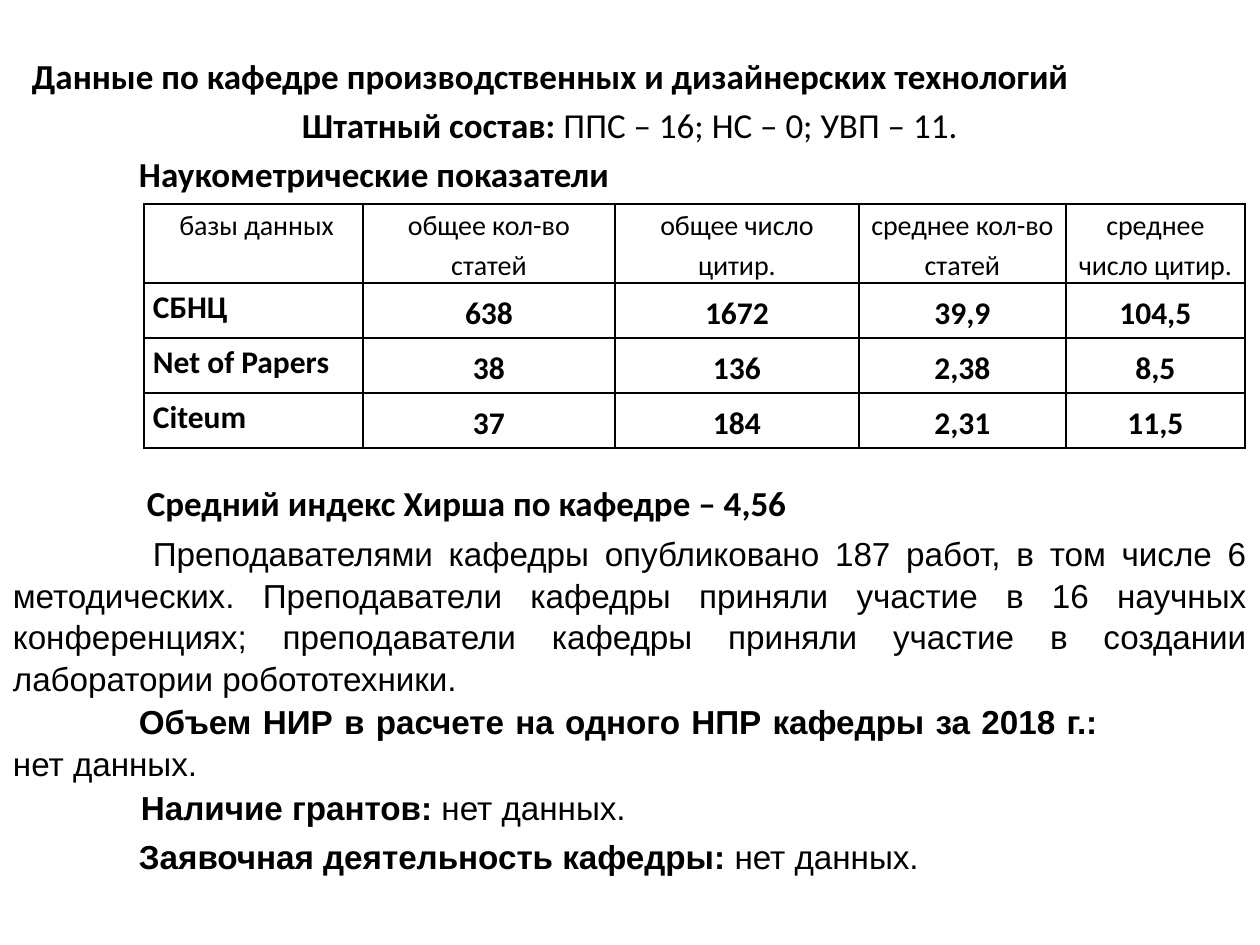
"""Build the slide of research figures for a university department."""
from dataclasses import dataclass
from typing import Any

from lxml import etree
from pptx import Presentation
from pptx.dml.color import RGBColor
from pptx.enum.text import MSO_ANCHOR, PP_ALIGN
from pptx.oxml.ns import qn
from pptx.util import Emu, Pt

LEFT, MID, JUST = PP_ALIGN.LEFT, PP_ALIGN.CENTER, PP_ALIGN.JUSTIFY
TOP, CORE = MSO_ANCHOR.TOP, MSO_ANCHOR.MIDDLE
SCALE = 914400 / 126


@dataclass(frozen=True)
class Theme:
    ink: str = "000000"
    head: str = "Calibri"
    body: str = "Arial"
    title: int = 20
    text: int = 19
    label: int = 16
    value: int = 18
    gap: int = 4
    lead: float = 1.05
    loose: float = 1.15


@dataclass(frozen=True)
class Run:
    text: str
    bold: bool = False
    slant: bool = False


@dataclass(frozen=True)
class Para:
    runs: tuple[Run, ...]
    font: str
    size: int
    align: Any = LEFT
    left: int = 0
    first: int = 0
    lead: float = 1.0


@dataclass(frozen=True)
class Box:
    x: int
    y: int
    w: int
    h: int
    paras: tuple[Para, ...]


THEME = Theme()


def px(num: int) -> Emu:
    return Emu(round(num * SCALE))


def write(par: Any, text: str, *, font: str, size: int, bold: bool = False,
          slant: bool = False) -> None:
    run = par.add_run()
    run.text = text
    face = run.font
    face.name, face.size = font, Pt(size)
    face.bold, face.italic = bold, slant
    face.color.rgb = RGBColor.from_string(THEME.ink)


def fill(par: Any, data: Para) -> None:
    par.alignment, par.line_spacing = data.align, data.lead
    props = par._p.get_or_add_pPr()
    props.set("marL", str(px(data.left)))
    props.set("indent", str(px(data.first)))
    for run in data.runs:
        write(par, run.text, font=data.font, size=data.size,
              bold=run.bold, slant=run.slant)


def draw(slide: Any, box: Box) -> None:
    frame = slide.shapes.add_textbox(px(box.x), px(box.y), px(box.w), px(box.h)).text_frame
    frame.word_wrap = True
    frame.margin_left = frame.margin_right = frame.margin_top = frame.margin_bottom = 0
    for num, data in enumerate(box.paras):
        par = frame.add_paragraph() if num else frame.paragraphs[0]
        par.space_before = Pt(THEME.gap if num else 0)
        fill(par, data)


def edge(cell: Any) -> None:
    props = cell._tc.get_or_add_tcPr()
    for num, side in enumerate(("lnL", "lnR", "lnT", "lnB")):
        line = etree.Element(qn(f"a:{side}"), w=str(Pt(1)))
        paint = etree.SubElement(line, qn("a:solidFill"))
        etree.SubElement(paint, qn("a:srgbClr"), val=THEME.ink)
        props.insert(num, line)


def grid(slide: Any, x: int, y: int, cols: tuple[int, ...], rows: tuple[int, ...],
         cells: list[list[Para]]) -> None:
    table = slide.shapes.add_table(len(rows), len(cols), px(x), px(y),
                                   px(sum(cols)), px(sum(rows))).table
    table.first_row = table.horz_banding = False
    for col, width in zip(table.columns, cols):
        col.width = px(width)
    for i, height in enumerate(rows):
        table.rows[i].height = px(height)
        for j, data in enumerate(cells[i]):
            cell = table.cell(i, j)
            cell.margin_left = cell.margin_right = px(9)
            cell.margin_top = cell.margin_bottom = 0
            cell.vertical_anchor = CORE if i and j else TOP
            cell.fill.background()
            edge(cell)
            fill(cell.text_frame.paragraphs[0], data)


def head(*runs: Run, align: Any = LEFT, left: int = 0) -> Para:
    return Para(runs, THEME.head, THEME.title, align, left)


def body(*runs: Run, align: Any = JUST, first: int = 126) -> Para:
    return Para(runs, THEME.body, THEME.text, align, 0, first, THEME.lead)


def label(*runs: Run) -> Para:
    return Para(runs, THEME.head, THEME.label, MID, lead=THEME.loose)


def value(text: str, align: Any) -> Para:
    return Para((Run(text, True),), THEME.head, THEME.value, align, lead=THEME.loose)


BOXES = (
    Box(13, 54, 1234, 145, (
        head(Run("Данные по кафедре производственных и дизайнерских технологий", True), left=19),
        head(Run("Штатный состав:", True), Run(" ППС – 16; НС – 0; УВП – 11."), align=MID),
        head(Run("Наукометрические показатели", True), left=126))),
    Box(13, 482, 1234, 215, (
        head(Run("Средний индекс Хирша по кафедре – 4,56", True), left=134),
        body(Run("Преподавателями кафедры опубликовано 187 работ, в том числе 6 "
                 "методических. Преподаватели кафедры приняли участие в 16 научных "
                 "конференциях; преподаватели кафедры приняли участие в создании "
                 "лаборатории робототехники."), first=140))),
    Box(13, 699, 1085, 80, (
        body(Run("Объем НИР в расчете на одного НПР кафедры за 2018 г.: ", True),
             Run("нет данных.")),)),
    Box(13, 785, 1234, 88, (
        body(Run("Наличие грантов: ", True), Run("нет данных."), first=128),
        body(Run("Заявочная деятельность кафедры: ", True), Run("нет данных.")))),
)
LABELS = ("общее кол-во статей", "общее число цитир.",
          "среднее кол-во статей", "среднее число цитир.")
VALUES = (
    ("СБНЦ", "638", "1672", "39,9", "104,5"),
    ("Net of Papers", "38", "136", "2,38", "8,5"),
    ("Citeum", "37", "184", "2,31", "11,5"),
)


def main() -> None:
    deck = Presentation()
    deck.slide_width, deck.slide_height = px(1260), px(945)
    slide = deck.slides.add_slide(deck.slide_layouts[6])
    for box in BOXES:
        draw(slide, box)
    cells = [[label(Run("\u00a0", True, True), Run("базы данных")),
              *(label(Run(text)) for text in LABELS)]]
    cells += [[value(text, MID if num else JUST) for num, text in enumerate(row)]
              for row in VALUES]
    grid(slide, 144, 204, (219, 252, 244, 207, 179), (79, 55, 55, 55), cells)
    deck.save("out.pptx")


if __name__ == "__main__":
    main()
